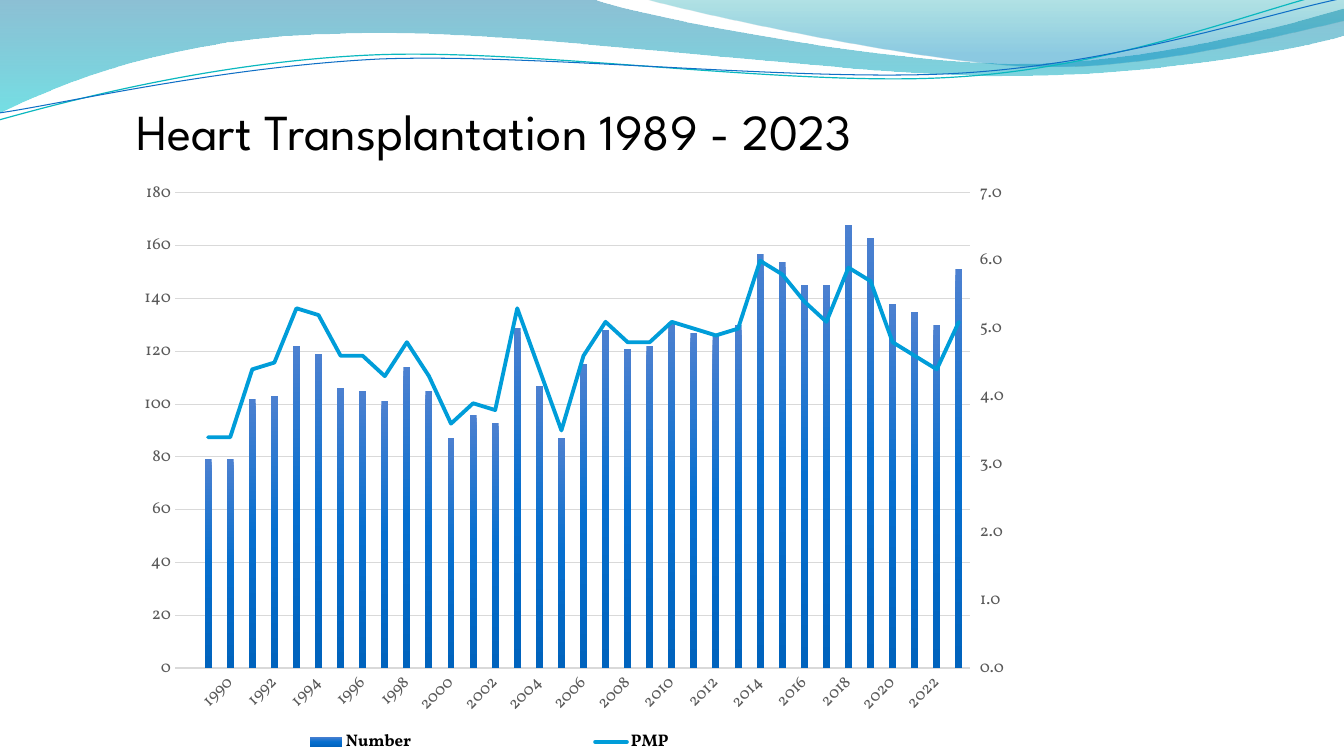
from dataclasses import dataclass

from pptx import Presentation
from pptx.chart.axis import ValueAxis
from pptx.chart.data import CategoryChartData
from pptx.dml.color import RGBColor
from pptx.enum.chart import XL_CHART_TYPE, XL_LEGEND_POSITION, XL_MARKER_STYLE, XL_TICK_MARK
from pptx.enum.text import MSO_ANCHOR, MSO_AUTO_SIZE, PP_ALIGN
from pptx.oxml import parse_xml
from pptx.oxml.ns import nsdecls, qn
from pptx.util import Pt

COLUMNS = XL_CHART_TYPE.COLUMN_CLUSTERED
BOTTOM = XL_LEGEND_POSITION.BOTTOM
NO_MARKER = XL_MARKER_STYLE.NONE
NO_TICK, TICK_OUT = XL_TICK_MARK.NONE, XL_TICK_MARK.OUTSIDE
MIDDLE, LEFT, NO_AUTOFIT = MSO_ANCHOR.MIDDLE, PP_ALIGN.LEFT, MSO_AUTO_SIZE.NONE

PX = 914400 / 100.8


@dataclass(frozen=True)
class Theme:
    title_font: str = "League Spartan"
    chart_font: str = "Vollkorn"
    title_size: int = 36
    label_size: int = 12
    chart_size: int = 10
    ink: str = "000000"
    label: str = "595959"
    grid: str = "D9D9D9"
    pmp_line: str = "009DD9"
    teal_line: str = "0AB8BF"
    blue_line: str = "0F6FC6"
    # Gradient stops: position, colour, opacity (all but colour in percent)
    wide_wave: tuple = ((0, "0074A1", 45), (100, "00C6CF", 55))
    right_wave: tuple = ((0, "00A1A9", 30), (80, "008BBF", 45))
    bars: tuple = ((0, "4C80D0", 100), (50, "066FCF", 100), (100, "0063BD", 100))


# Wave outlines: a start point, then lines (2 numbers) and cubic curves (6 numbers)
WIDE_WAVE = [(0, 0), (592, -1), (639, 17, 891, 64, 1019, 64), (1146, 64, 1287, 26, 1344, 9),
             (1345, 36), (1321, 44, 1168, 77, 1002, 76), (836, 76, 513, 28, 346, 34),
             (173, 36, 61, 84, -2, 114), (0, 0)]
RIGHT_WAVE = [(643, -1), (684, 11, 916, 62, 1033, 66), (1149, 70, 1292, 32, 1344, 21),
              (1344, 0), (643, -1)]
TEAL_CURVE = [(-1, 120), (64, 102, 212, 62, 372, 55), (531, 48, 795, 88, 957, 77),
              (1119, 67, 1261, 8, 1341, -10)]
BLUE_CURVE = [(-1, 113), (62, 104, 220, 67, 380, 59), (541, 53, 802, 83, 963, 73),
              (1123, 63, 1265, 14, 1344, -2)]

YEARS = [""] + [str(year) for year in range(1989, 2024)]
NUMBER = [None, 79, 79, 102, 103, 122, 119, 106, 105, 101, 114, 105, 87, 96, 93, 129, 107, 87,
          115, 128, 121, 122, 131, 127, 126, 130, 157, 154, 145, 145, 168, 163, 138, 135, 130, 151]
PMP = [None, 3.4, 3.4, 4.4, 4.5, 5.3, 5.2, 4.6, 4.6, 4.3, 4.8, 4.3, 3.6, 3.9, 3.8, 5.3, 4.4, 3.5,
       4.6, 5.1, 4.8, 4.8, 5.1, 5, 4.9, 5, 6, 5.8, 5.4, 5.1, 5.9, 5.7, 4.8, 4.6, 4.4, 5.1]

LINE_PLOT = f"""<c:lineChart {nsdecls("c")}><c:grouping val="standard"/><c:varyColors val="0"/>
<c:marker val="1"/><c:axId val="501"/><c:axId val="502"/></c:lineChart>"""
HIDDEN_YEARS = f"""<c:catAx {nsdecls("c")}><c:axId val="501"/>
<c:scaling><c:orientation val="minMax"/></c:scaling><c:delete val="1"/><c:axPos val="b"/>
<c:crossAx val="502"/><c:crosses val="autoZero"/></c:catAx>"""
RIGHT_AXIS = f"""<c:valAx {nsdecls("c")}><c:axId val="502"/>
<c:scaling><c:orientation val="minMax"/></c:scaling><c:delete val="0"/><c:axPos val="r"/>
<c:majorTickMark val="out"/><c:minorTickMark val="none"/><c:tickLblPos val="nextTo"/>
<c:crossAx val="501"/><c:crosses val="max"/><c:crossBetween val="between"/></c:valAx>"""


def px(length):
    return round(length * PX)


class SlideBuilder:
    def __init__(self, page, theme):
        self.page, self.theme = page, theme

    def font(self, font, name, size, color, bold=False):
        font.name, font.size, font.bold = name, Pt(size), bold
        font.color.rgb = RGBColor.from_string(color)

    def line(self, line, color, width):
        line.color.rgb = RGBColor.from_string(color)
        line.width = Pt(width)

    def gradient(self, fill, owner, stops):
        """Fill from top to bottom; owner is the element that holds the fill."""
        fill.gradient()
        fill.gradient_angle = 270
        marks = "".join(
            f'<a:gs pos="{place * 1000}"><a:srgbClr val="{color}">'
            f'<a:alpha val="{opacity * 1000}"/></a:srgbClr></a:gs>'
            for place, color, opacity in stops)
        old = next(owner.iter(qn("a:gsLst")))
        old.getparent().replace(old, parse_xml(f'<a:gsLst {nsdecls("a")}>{marks}</a:gsLst>'))

    def outline(self, outline, closed):
        """Draw through the end points, then bend the curved parts."""
        builder = self.page.shapes.build_freeform(*map(px, outline[0]))
        ends = [(px(part[-2]), px(part[-1])) for part in outline[1:]]
        builder.add_line_segments(ends, close=closed)
        shape = builder.convert_to_shape()
        shape.shadow.inherit = False
        segments = list(shape._element.iter(qn("a:lnTo")))
        for segment, part in zip(segments, outline[1:]):
            if len(part) == 6:
                points = "".join(
                    f'<a:pt x="{px(x) - shape.left}" y="{px(y) - shape.top}"/>'
                    for x, y in zip(part[::2], part[1::2]))
                bend = parse_xml(f'<a:cubicBezTo {nsdecls("a")}>{points}</a:cubicBezTo>')
                segment.getparent().replace(segment, bend)
        return shape

    def wave(self, outline, stops):
        shape = self.outline(outline, closed=True)
        self.gradient(shape.fill, shape._element, stops)
        shape.line.fill.background()

    def curve(self, outline, color, width):
        shape = self.outline(outline, closed=False)
        shape.fill.background()
        self.line(shape.line, color, width)

    def title(self, text, left, top, width, height):
        box = self.page.shapes.title
        box.left, box.top, box.width, box.height = map(px, (left, top, width, height))
        frame = box.text_frame
        frame.text = text
        frame.word_wrap, frame.auto_size, frame.vertical_anchor = True, NO_AUTOFIT, MIDDLE
        para = frame.paragraphs[0]
        para.alignment, para.line_spacing = LEFT, 0.8
        self.font(para.font, self.theme.title_font, self.theme.title_size, self.theme.ink)

    def axis(self, axis, tick=NO_TICK):
        axis.major_tick_mark, axis.minor_tick_mark = tick, NO_TICK
        axis.format.line.fill.background()
        self.font(axis.tick_labels.font, self.theme.chart_font, self.theme.label_size,
                  self.theme.label)

    def scale(self, axis, top, step, number_format):
        axis.minimum_scale, axis.maximum_scale, axis.major_unit = 0, top, step
        axis.tick_labels.number_format = number_format
        axis.tick_labels.number_format_is_linked = False

    def layout(self, part, area, chart_size, inner=False):
        """Place a chart part; area is left, top, width, height within the chart."""
        for old in part.findall(qn("c:layout")):
            part.remove(old)
        target = '<c:layoutTarget val="inner"/>' if inner else ""
        sizes = "".join(f'<c:{key} val="{length / whole}"/>'
                        for key, length, whole in zip("xywh", area, chart_size * 2))
        layout = parse_xml(
            f'<c:layout {nsdecls("c")}><c:manualLayout>{target}<c:xMode val="edge"/>'
            f'<c:yMode val="edge"/>{sizes}</c:manualLayout></c:layout>')
        part.insert(0 if inner else 1, layout)

    def combined_chart(self, left, top, width, height):
        theme = self.theme
        data = CategoryChartData()
        data.categories = YEARS
        data.add_series("Number", NUMBER)
        data.add_series("PMP", PMP)
        chart = self.page.shapes.add_chart(
            COLUMNS, *map(px, (left, top, width, height)), data).chart
        chart.has_title = False
        self.font(chart.font, theme.chart_font, theme.chart_size, theme.ink)

        # Bars
        bars = chart.plots[0]
        bars.gap_width, bars.vary_by_categories = 219, False
        number, pmp = bars.series
        self.gradient(number.format.fill, number._element, theme.bars)

        # Left and bottom axes
        self.axis(chart.value_axis)
        self.scale(chart.value_axis, 180, 20, "0")
        self.line(chart.value_axis.major_gridlines.format.line, theme.grid, 0.75)
        years = chart.category_axis
        self.axis(years)
        self.line(years.format.line, theme.grid, 1)
        years._element.find(qn("c:txPr")).find(qn("a:bodyPr")).set("rot", "-2700000")

        # Line on its own right axis
        line_plot, right_axis = parse_xml(LINE_PLOT), parse_xml(RIGHT_AXIS)
        bars._element.addnext(line_plot)
        line_plot.insert(2, pmp._element)
        for flag in pmp._element.findall(qn("c:invertIfNegative")):
            pmp._element.remove(flag)
        chart.value_axis._element.addnext(right_axis)
        right_axis.addnext(parse_xml(HIDDEN_YEARS))
        right = ValueAxis(right_axis)
        self.axis(right, TICK_OUT)
        self.scale(right, 7, 1, "0.0")
        pmp = chart.plots[1].series[0]
        pmp.smooth, pmp.marker.style = False, NO_MARKER
        self.line(pmp.format.line, theme.pmp_line, 2.75)
        next(pmp._element.iter(qn("a:ln"))).set("cap", "rnd")

        # Legend and plot area
        chart.has_legend = True
        legend = chart.legend
        legend.position, legend.include_in_layout = BOTTOM, False
        self.font(legend.font, theme.chart_font, theme.label_size, theme.ink, bold=True)
        self.layout(legend._element, (6, 559, 715, 30), (width, height))
        self.layout(line_plot.getparent(), (49, 25, 795, 475), (width, height), inner=True)


def main():
    deck = Presentation()
    deck.slide_width, deck.slide_height = px(1344), px(756)
    theme = Theme()
    slide = SlideBuilder(deck.slides.add_slide(deck.slide_layouts[5]), theme)

    # Waves along the top
    slide.wave(WIDE_WAVE, theme.wide_wave)
    slide.wave(RIGHT_WAVE, theme.right_wave)
    slide.curve(TEAL_CURVE, theme.teal_line, 0.85)
    slide.curve(BLUE_CURVE, theme.blue_line, 0.75)

    # Title and chart
    slide.title("Heart Transplantation 1989 - 2023", 126, 105, 907, 62)
    slide.combined_chart(126, 168, 896, 598)
    deck.save("out.pptx")


if __name__ == "__main__":
    main()
